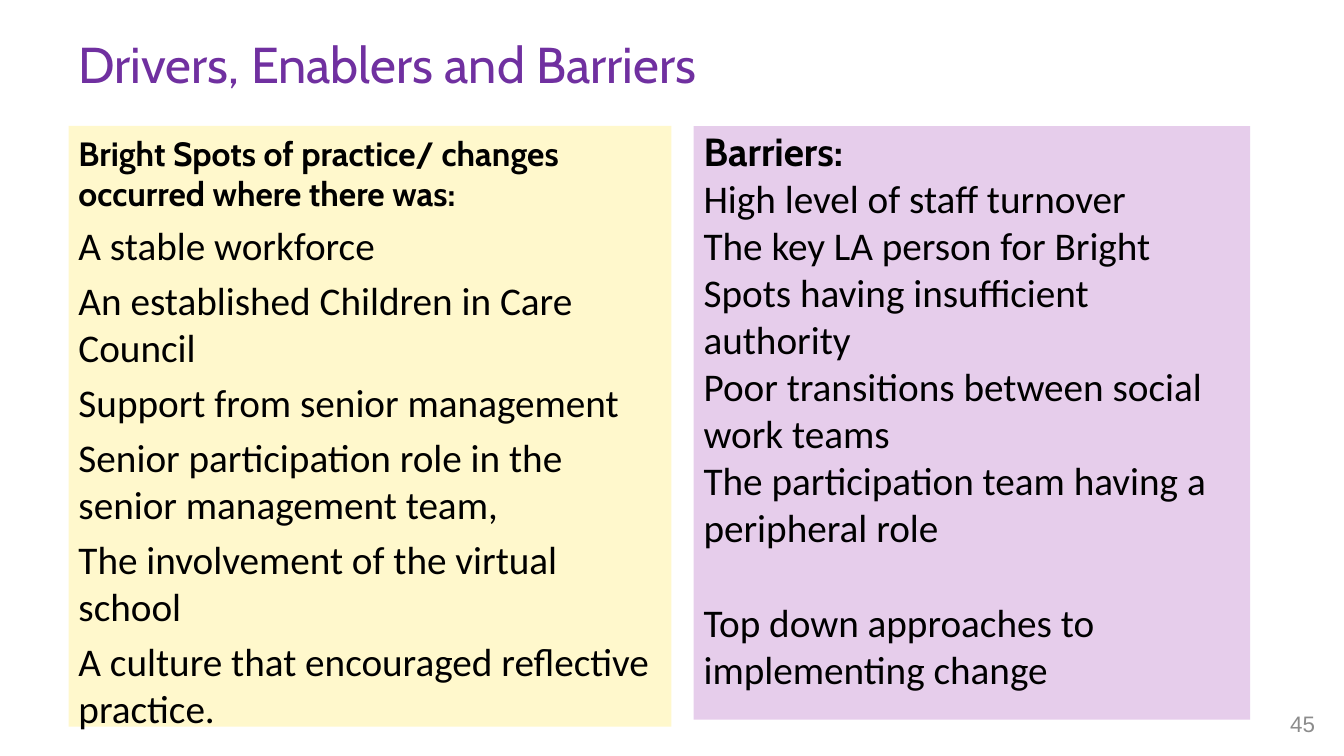
import pptx
import pptx.util
import pptx.dml.color
import pptx.enum.shapes
import pptx.enum.text
import lxml.etree
from dataclasses import dataclass

PX = 9144  # EMU per px, 100 px to the inch
ANCHOR = pptx.enum.text.MSO_ANCHOR
ALIGN = pptx.enum.text.PP_ALIGN


@dataclass(frozen=True)
class Theme:
    head: str = "Cabin"
    body: str = "Calibri"
    plain: str = "Arial"
    violet: str = "7030A0"
    cream: str = "FFF8CC"
    lilac: str = "BD79CA"
    black: str = "000000"
    grey: str = "8C8C8C"
    title: int = 36
    large: int = 28
    lead: int = 24
    small: int = 16


THEME = Theme()

DRIVERS = [
    "A stable workforce",
    "An established Children in Care Council",
    "Support from senior management",
    "Senior participation role in the senior management team,",
    "The involvement of the virtual school",
    "A culture that encouraged reflective practice.",
]
HURDLES = [
    "High level of staff turnover",
    "The key LA person for Bright Spots having insufficient authority",
    "Poor transitions between social work teams",
    "The participation team having a peripheral role",
]
LAST = "Top down approaches to implementing change"


def scale(box):
    return [n * PX for n in box]


def setup(frame, anchor, top=5):
    frame.word_wrap = True
    frame.vertical_anchor = anchor
    frame.margin_left = frame.margin_right = 10 * PX
    frame.margin_top = top * PX
    frame.margin_bottom = 5 * PX


def write(para, text, font, size, color, bold=False, align=ALIGN.LEFT):
    para.alignment = align
    run = para.add_run()
    run.text = text
    run.font.name = font
    run.font.size = pptx.util.Pt(size)
    run.font.bold = bold
    run.font.color.rgb = pptx.dml.color.RGBColor.from_string(color)


def label(slide, box, text, font, size, color, align=ALIGN.LEFT):
    frame = slide.shapes.add_textbox(*scale(box)).text_frame
    setup(frame, ANCHOR.MIDDLE)
    write(frame.paragraphs[0], text, font, size, color, align=align)


def panel(slide, box, fill, head, size, items, top, alpha=100):
    """Draw a filled panel; items are pairs of text and space before."""
    kind = pptx.enum.shapes.MSO_SHAPE.RECTANGLE
    shape = slide.shapes.add_shape(kind, *scale(box))
    shape.shadow.inherit = False
    shape.line.fill.background()
    shape.fill.solid()
    shape.fill.fore_color.rgb = pptx.dml.color.RGBColor.from_string(fill)
    if alpha < 100:
        tone = shape.fill._xPr.find(".//" + pptx.oxml.ns.qn("a:srgbClr"))
        mark = lxml.etree.SubElement(tone, pptx.oxml.ns.qn("a:alpha"))
        mark.set("val", str(alpha * 1000))

    # Heading, then one paragraph per item
    frame = shape.text_frame
    setup(frame, ANCHOR.TOP, top)
    write(frame.paragraphs[0], head, THEME.head, size, THEME.black, bold=True)
    for text, gap in items:
        para = frame.add_paragraph()
        para.space_before = pptx.util.Pt(gap)
        write(para, text, THEME.body, THEME.large, THEME.black)


def build(slide):
    # Title
    label(slide, (68, 0, 1200, 125), "Drivers, Enablers and Barriers",
          THEME.head, THEME.title, THEME.violet)

    # Drivers and enablers
    panel(slide, (68, 125, 598, 596), THEME.cream,
          "Bright Spots of practice/ changes occurred where there was:",
          THEME.lead, [(text, 5.6) for text in DRIVERS], top=7)

    # Barriers, the last one set apart by a line
    items = [(text, 0) for text in HURDLES] + [(LAST, 34)]
    panel(slide, (688, 125, 552, 589), THEME.lilac, "Barriers:",
          THEME.large, items, top=1, alpha=37)

    # Page number
    label(slide, (1003, 698, 311, 40), "45", THEME.plain, THEME.small,
          THEME.grey, ALIGN.RIGHT)


def main():
    deck = pptx.Presentation()
    deck.slide_width, deck.slide_height = scale((1333, 750))
    build(deck.slides.add_slide(deck.slide_layouts[6]))
    deck.save("out.pptx")


if __name__ == "__main__":
    main()
